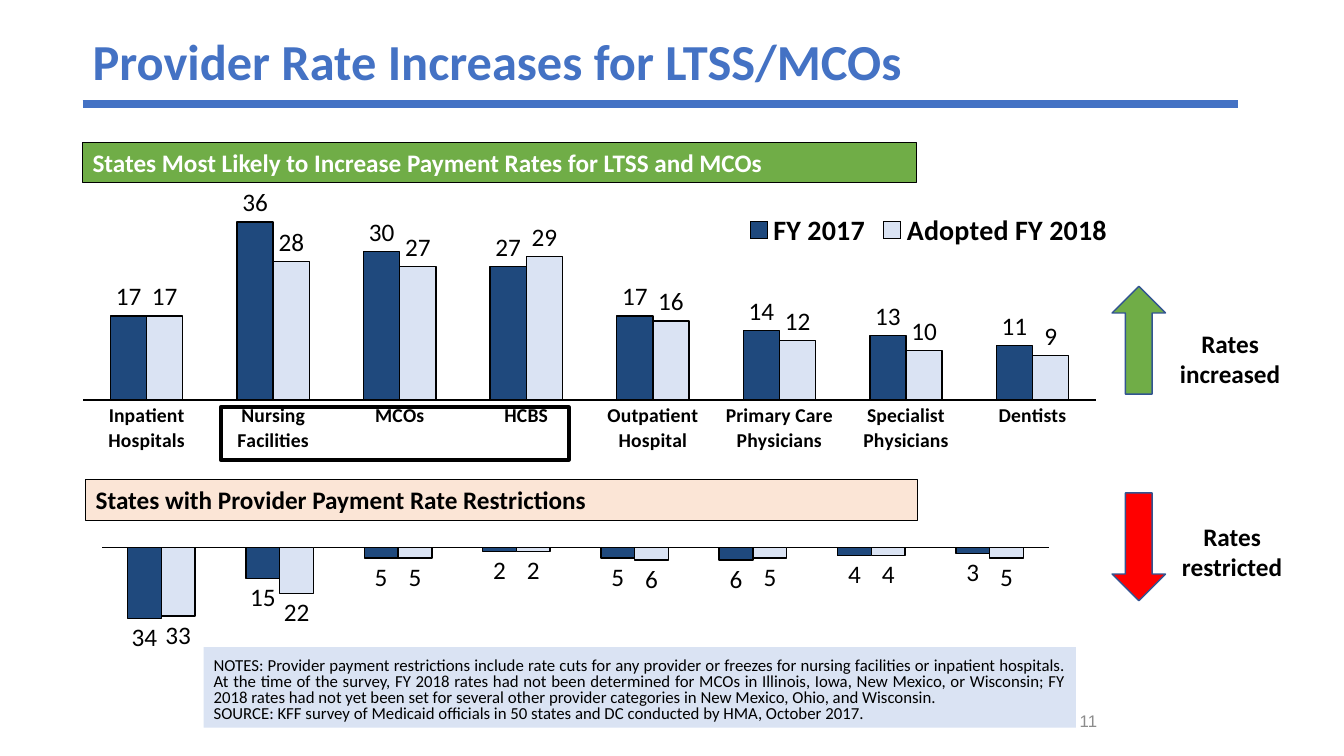
from dataclasses import dataclass

from lxml import etree
from pptx import Presentation
from pptx.chart.data import CategoryChartData
from pptx.dml.color import RGBColor
from pptx.enum.chart import XL_CHART_TYPE, XL_LABEL_POSITION, XL_LEGEND_POSITION
from pptx.enum.chart import XL_TICK_LABEL_POSITION, XL_TICK_MARK
from pptx.enum.shapes import MSO_CONNECTOR, MSO_SHAPE
from pptx.enum.text import MSO_ANCHOR, PP_ALIGN
from pptx.oxml.ns import qn
from pptx.util import Inches, Pt

COLUMNS = XL_CHART_TYPE.COLUMN_CLUSTERED
OUTSIDE = XL_LABEL_POSITION.OUTSIDE_END
NO_TICK, NO_NAMES = XL_TICK_MARK.NONE, XL_TICK_LABEL_POSITION.NONE
LEGEND_TOP = XL_LEGEND_POSITION.TOP
LINE = MSO_CONNECTOR.STRAIGHT
RECT, UP, DOWN = MSO_SHAPE.RECTANGLE, MSO_SHAPE.UP_ARROW, MSO_SHAPE.DOWN_ARROW
TOP, MIDDLE, BOTTOM = MSO_ANCHOR.TOP, MSO_ANCHOR.MIDDLE, MSO_ANCHOR.BOTTOM
LEFT, CENTER, RIGHT, JUSTIFY = (
    PP_ALIGN.LEFT, PP_ALIGN.CENTER, PP_ALIGN.RIGHT, PP_ALIGN.JUSTIFY)


@dataclass(frozen=True)
class Theme:
    font: str = "Calibri"
    number_font: str = "Arial"
    blue: str = "4472C4"
    navy: str = "1F497D"
    pale: str = "DAE3F3"
    green: str = "70AD47"
    peach: str = "FBE5D6"
    red: str = "FF0000"
    edge: str = "325491"
    black: str = "000000"
    white: str = "FFFFFF"
    gray: str = "8C8C8C"
    title: int = 36
    legend: int = 20
    body: int = 18
    label: int = 14
    note: int = 12


T = Theme()
GROUPS = ["Inpatient Hospitals", "Nursing Facilities", "MCOs", "HCBS",
          "Outpatient Hospital", "Primary Care Physicians",
          "Specialist Physicians", "Dentists"]
RAISED = {"FY 2017": (17, 36, 30, 27, 17, 14, 13, 11),
          "Adopted FY 2018": (17, 28, 27, 29, 16, 12, 10, 9)}
CUT = {"FY 2017": (-34, -15, -5, -2, -5, -6, -4, -3),
       "Adopted FY 2018": (-33, -22, -5, -2, -6, -5, -4, -5)}
NOTES = [
    "NOTES: Provider payment restrictions include rate cuts for any provider "
    "or freezes for nursing facilities or inpatient hospitals. At the time of "
    "the survey, FY 2018 rates had not been determined for MCOs in Illinois, "
    "Iowa, New Mexico, or Wisconsin; FY 2018 rates had not yet been set for "
    "several other provider categories in New Mexico, Ohio, and Wisconsin.",
    "SOURCE: KFF survey of Medicaid officials in 50 states and DC conducted "
    "by HMA, October 2017."]


def rgb(color):
    return RGBColor.from_string(color)


def inches(box):
    return [Inches(value) for value in box]


def set_font(font, size, color=T.black, bold=False, name=T.font):
    font.name, font.size, font.bold = name, Pt(size), bold
    font.color.rgb = rgb(color)


def write(shape, lines, size, color=T.black, bold=False, name=T.font,
          align=LEFT, anchor=TOP, spacing=None):
    frame = shape.text_frame
    frame.word_wrap, frame.vertical_anchor = True, anchor
    frame.text = "\n".join(lines)
    for par in frame.paragraphs:
        par.alignment = align
        if spacing:
            par.line_spacing = spacing
        set_font(par.font, size, color, bold, name)


def add_text(slide, box, text, size, **style):
    write(slide.shapes.add_textbox(*inches(box)), [text], size, **style)


def add_block(slide, kind, box, fill=None, line=None, width=1):
    shape = slide.shapes.add_shape(kind, *inches(box))
    shape.shadow.inherit = False
    if fill:
        shape.fill.solid()
        shape.fill.fore_color.rgb = rgb(fill)
    else:
        shape.fill.background()
    if line:
        shape.line.color.rgb = rgb(line)
        shape.line.width = Pt(width)
    else:
        shape.line.fill.background()
    return shape


def set_layout(parent, index, inner=False, **area):
    """Place a chart part by fractions x, y, w, h of the chart."""
    for old in parent.findall(qn("c:layout")):
        parent.remove(old)
    layout = etree.Element(qn("c:layout"))
    manual = etree.SubElement(layout, qn("c:manualLayout"))
    marks = {"layoutTarget": "inner"} if inner else {}
    marks.update(xMode="edge", yMode="edge", **area)
    for tag, value in marks.items():
        etree.SubElement(manual, qn("c:" + tag)).set("val", str(value))
    parent.insert(index, layout)


def add_bars(slide, box, series, low, high, area, axis_width, names):
    data = CategoryChartData()
    data.categories = GROUPS
    for name, values in series.items():
        data.add_series(name, values)
    chart = slide.shapes.add_chart(COLUMNS, *inches(box), data).chart
    chart.has_title = chart.has_legend = False
    set_font(chart.font, T.body)
    set_layout(chart._chartSpace.chart.plotArea, 0, inner=True, **area)

    # Axes
    value_axis, group_axis = chart.value_axis, chart.category_axis
    value_axis.minimum_scale, value_axis.maximum_scale = low, high
    value_axis.has_major_gridlines = value_axis.visible = False
    group_axis.major_tick_mark = NO_TICK
    group_axis.format.line.color.rgb = rgb(T.black)
    group_axis.format.line.width = Pt(axis_width)
    if names:
        set_font(group_axis.tick_labels.font, T.label, bold=True)
    else:
        group_axis.tick_label_position = NO_NAMES

    # Bars and their values
    plot = chart.plots[0]
    plot.gap_width, plot.overlap, plot.vary_by_categories = 150, 0, False
    for bars, color in zip(plot.series, (T.navy, T.pale)):
        bars.invert_if_negative = False
        bars.format.fill.solid()
        bars.format.fill.fore_color.rgb = rgb(color)
        bars.format.line.color.rgb = rgb(T.black)
        bars.format.line.width = Pt(1)
        labels = bars.data_labels
        labels.show_value, labels.position = True, OUTSIDE
        labels.number_format, labels.number_format_is_linked = "0;0", False
        set_font(labels.font, T.body)
    return chart


def add_legend(chart, **area):
    chart.has_legend = True
    legend = chart.legend
    legend.position, legend.include_in_layout = LEGEND_TOP, False
    set_font(legend.font, T.legend, bold=True)
    set_layout(legend._element, 1, **area)


def add_head(slide, x, y, w):
    add_text(slide, (x, y, 11.04, 0.9), "Provider Rate Increases for LTSS/MCOs",
             T.title, color=T.blue, bold=True, spacing=0.9)
    rule = slide.shapes.add_connector(
        LINE, *inches((x, y + 0.71, x + w, y + 0.71)))
    rule.line.color.rgb, rule.line.width = rgb(T.blue), Pt(6)
    etree.SubElement(rule._element.spPr, qn("a:effectLst"))


def add_banner(slide, box, text, fill, color):
    banner = add_block(slide, RECT, box, fill, T.black, 0.75)
    write(banner, [text], T.body, color, bold=True)


def add_trend(slide, x, y, kind, fill, text, shift, drop):
    add_block(slide, kind, (x, y, 0.53, 1.07), fill, T.edge)
    add_text(slide, (x + shift, y + drop, 1.28, 0.71), text, T.body,
             bold=True, align=CENTER)


def add_foot(slide, x, y):
    add_text(slide, (x + 6.71, y + 0.53, 2.25, 0.4), "11", T.note, color=T.gray,
             name=T.number_font, align=RIGHT, anchor=MIDDLE)
    notes = add_block(slide, RECT, (x, y, 8.65, 0.8), T.pale)
    write(notes, NOTES, T.note, align=JUSTIFY, anchor=BOTTOM, spacing=0.8)


def main():
    deck = Presentation()
    deck.slide_width, deck.slide_height = Inches(13.33), Inches(7.5)
    slide = deck.slides.add_slide(deck.slide_layouts[6])
    add_head(slide, 0.82, 0.32, 11.46)

    # Rate increases
    chart = add_bars(slide, (0.82, 1.86, 10.36, 2.93), RAISED, 0, 40,
                     dict(x=0, y=0.05, w=0.97, h=0.67), 1, True)
    add_legend(chart, x=0.63, y=0.08, w=0.36, h=0.13)
    add_banner(slide, (0.82, 1.41, 8.27, 0.4),
               "States Most Likely to Increase Payment Rates for LTSS and MCOs",
               T.green, T.white)
    add_block(slide, RECT, (2.19, 4.04, 3.45, 0.52), line=T.black, width=3)
    add_trend(slide, 11.03, 2.84, UP, T.green, "Rates increased", 0.53, 0.37)

    # Rate restrictions
    add_bars(slide, (0.82, 5.12, 9.68, 1.56), CUT, -40, 0,
             dict(x=0.02, y=0.2, w=0.97, h=0.53), 0.75, False)
    add_banner(slide, (0.85, 4.76, 8.25, 0.4),
               "States with Provider Payment Rate Restrictions",
               T.peach, T.black)
    add_trend(slide, 11.03, 4.89, DOWN, T.red, "Rates restricted", 0.55, 0.23)

    add_foot(slide, 2.02, 6.42)
    deck.save("out.pptx")


if __name__ == "__main__":
    main()
